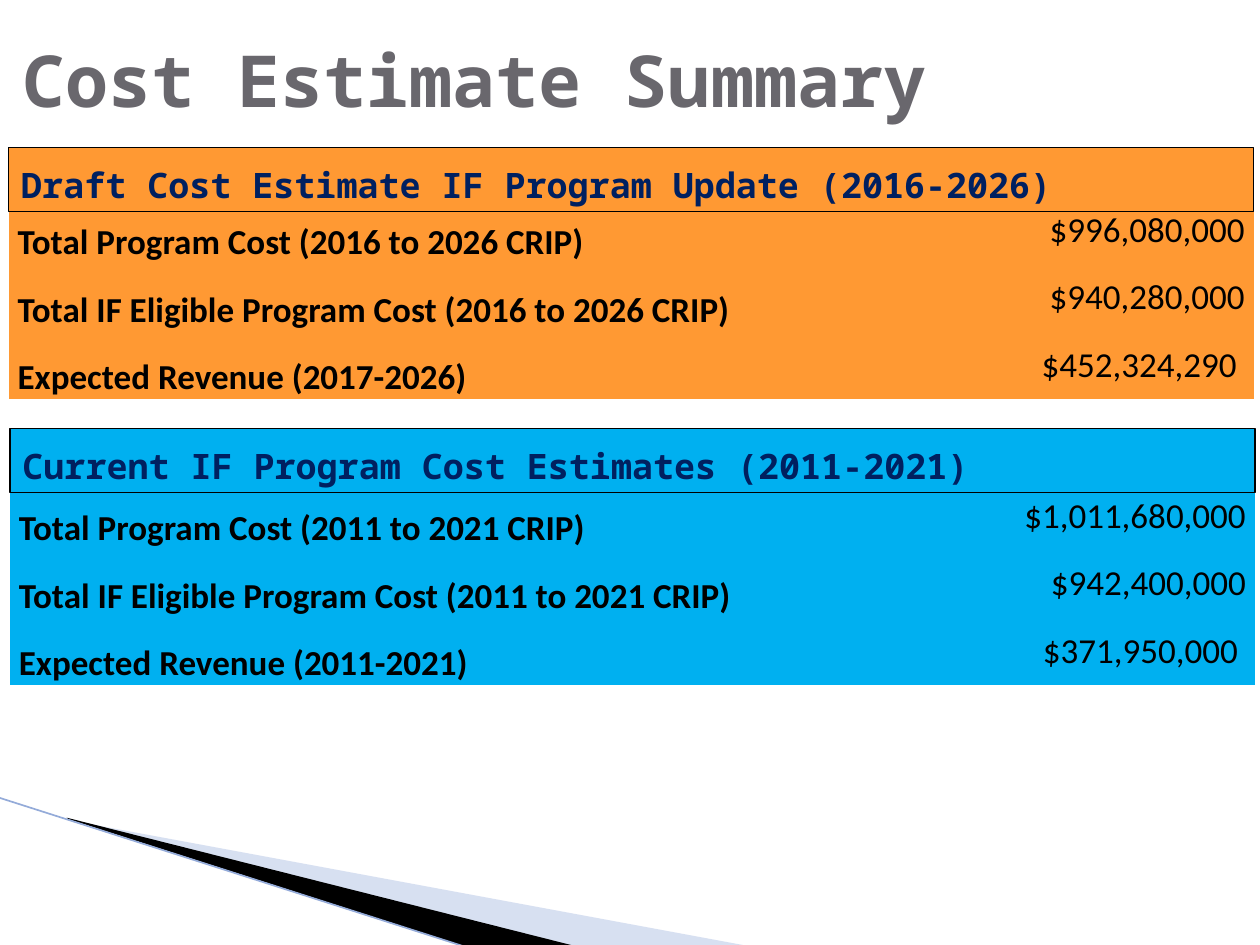
from dataclasses import dataclass

import pptx
import pptx.dml.color
import pptx.enum.shapes
import pptx.enum.text
import pptx.oxml.ns
import pptx.oxml.xmlchemy
import pptx.util
from lxml import etree
from pptx.util import Inches

ANCHOR = pptx.enum.text.MSO_ANCHOR
ALIGN = pptx.enum.text.PP_ALIGN
NO_GRID_STYLE = "{2D5ABB26-0587-4C30-8999-92F81FD0307C}"
qn = pptx.oxml.ns.qn


@dataclass(frozen=True)
class Theme:
    heading_font: str = "Noto Sans Mono"
    body_font: str = "Calibri"
    title_size: float = 41
    text_size: float = 20
    title: str = "69676D"
    heading: str = "002060"
    black: str = "000000"
    draft: str = "FF9933"
    current: str = "00B0F0"
    pale_wedge: str = "9DB2DD"
    edge: str = "94ABD9"


THEME = Theme()


@dataclass(frozen=True)
class Box:
    left: float
    top: float
    width: float
    height: float

    def emu(self):
        return [Inches(v) for v in (self.left, self.top, self.width, self.height)]


def rgb(color):
    return pptx.dml.color.RGBColor.from_string(color)


def set_fill(fill, color):
    fill.solid()
    fill.fore_color.rgb = rgb(color)


def write(text_frame, text, font_name, size, color, bold=True, align=ALIGN.LEFT):
    text_frame.text = text
    paragraph = text_frame.paragraphs[0]
    paragraph.alignment = align
    font = paragraph.runs[0].font
    font.name, font.size, font.bold = font_name, pptx.util.Pt(size), bold
    font.color.rgb = rgb(color)


def add_wedge(slide, box, points, color, opacity=None):
    """Draw a polygon whose points are inches from the box corner."""
    corners = [(Inches(box.left + x), Inches(box.top + y)) for x, y in points]
    builder = slide.shapes.build_freeform(*corners[0], scale=1.0)
    builder.add_line_segments(corners[1:], close=True)
    shape = builder.convert_to_shape()
    shape.shadow.inherit = False
    shape.line.fill.background()
    set_fill(shape.fill, color)
    if opacity is not None:
        color_element = next(shape._element.spPr.iter(qn("a:srgbClr")))
        etree.SubElement(color_element, qn("a:alpha"), val=str(opacity * 1000))


def add_corner_decoration(slide, box):
    add_wedge(slide, box, [(0.56, 0.18), (5.96, 1.18), (4.57, 1.18), (0.56, 0.17)],
              THEME.pale_wedge, opacity=40)
    add_wedge(slide, box, [(0.54, 0.16), (4.58, 1.18), (3.73, 1.19), (0.55, 0.17)],
              THEME.black)
    edge = slide.shapes.add_connector(
        pptx.enum.shapes.MSO_CONNECTOR.STRAIGHT, Inches(box.left), Inches(box.top),
        Inches(box.left + 3.72), Inches(box.top + box.height))
    edge.line.color.rgb = rgb(THEME.edge)
    edge.line.width = pptx.util.Pt(0.95)
    etree.SubElement(edge._element.spPr, qn("a:effectLst"))


def add_title(slide, box, text):
    text_frame = slide.shapes.add_textbox(*box.emu()).text_frame
    text_frame.word_wrap = True
    text_frame.vertical_anchor = ANCHOR.MIDDLE
    write(text_frame, text, THEME.heading_font, THEME.title_size, THEME.title)


def add_cost_table(slide, box, rows, color):
    frame = slide.shapes.add_table(len(rows), 2, *box.emu())
    table = frame.table
    table.first_row = table.horz_banding = False
    next(frame._element.iter(qn("a:tableStyleId"))).text = NO_GRID_STYLE
    value_width = 2.36
    table.columns[0].width = Inches(box.width - value_width)
    table.columns[1].width = Inches(value_width)
    for row_index, row in enumerate(rows):
        for column_index, text in enumerate(row):
            is_label = column_index == 0
            cell = table.cell(row_index, column_index)
            set_fill(cell.fill, color)
            cell.margin_left = cell.margin_right = Inches(0.07)
            cell.margin_top = cell.margin_bottom = 0
            cell.vertical_anchor = ANCHOR.BOTTOM if is_label else ANCHOR.MIDDLE
            write(cell.text_frame, text, THEME.body_font, THEME.text_size, THEME.black,
                  bold=is_label, align=ALIGN.LEFT if is_label else ALIGN.RIGHT)


def add_heading_bar(slide, box, text, color):
    shape = slide.shapes.add_shape(pptx.enum.shapes.MSO_SHAPE.RECTANGLE, *box.emu())
    shape.shadow.inherit = False
    set_fill(shape.fill, color)
    shape.line.color.rgb = rgb(THEME.black)
    shape.line.width = pptx.util.Pt(0.75)
    shape.text_frame.word_wrap = True
    shape.text_frame.vertical_anchor = ANCHOR.BOTTOM
    write(shape.text_frame, text, THEME.heading_font, THEME.text_size, THEME.heading)


def add_estimate(slide, box, heading, rows, color):
    """Place a cost table at the foot of the box and its heading bar at the top."""
    table_height = 1.61
    table_top = box.top + box.height - table_height
    add_cost_table(slide, Box(box.left, table_top, box.width, table_height), rows, color)
    add_heading_bar(slide, Box(box.left, box.top, box.width, 0.51), heading, color)


def main():
    presentation = pptx.Presentation()
    presentation.slide_width, presentation.slide_height = Inches(10), Inches(7.5)
    slide = presentation.slides.add_slide(presentation.slide_layouts[6])

    add_corner_decoration(slide, Box(-0.01, 6.33, 5.96, 1.19))
    add_title(slide, Box(0.08, 0, 9, 1.25), "Cost Estimate Summary")
    add_estimate(
        slide, Box(0.07, 1.17, 9.88, 2),
        "Draft Cost Estimate IF Program Update (2016-2026)",
        [("Total Program Cost (2016 to 2026 CRIP)", "$996,080,000"),
         ("Total IF Eligible Program Cost (2016 to 2026 CRIP)", "$940,280,000"),
         ("Expected Revenue (2017-2026)", "$452,324,290 ")],
        THEME.draft)
    add_estimate(
        slide, Box(0.08, 3.4, 9.88, 2.04),
        "Current IF Program Cost Estimates (2011-2021)",
        [("Total Program Cost (2011 to 2021 CRIP)", "$1,011,680,000"),
         ("Total IF Eligible Program Cost (2011 to 2021 CRIP)", "$942,400,000"),
         ("Expected Revenue (2011-2021)", "$371,950,000 ")],
        THEME.current)
    presentation.save("out.pptx")


if __name__ == "__main__":
    main()
